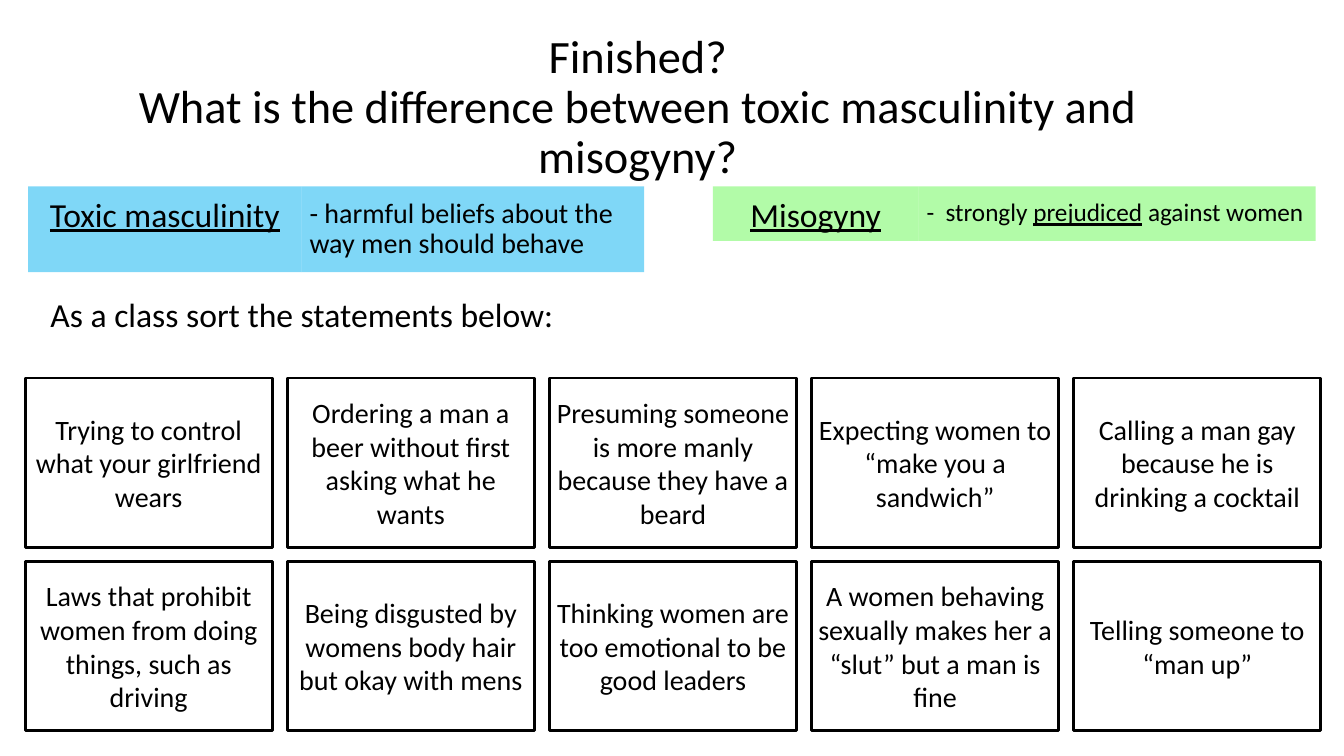
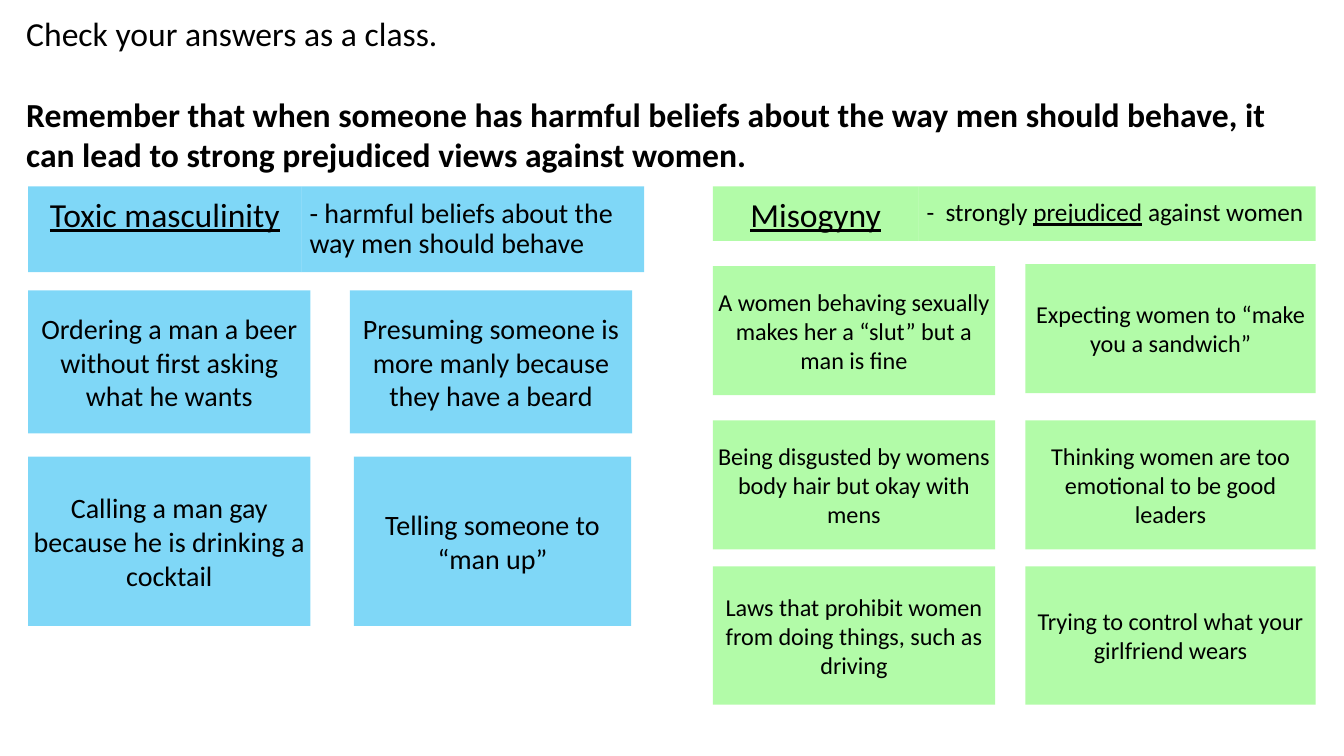
from lxml.etree import SubElement
from pptx import Presentation
from pptx.dml.color import RGBColor
from pptx.enum.shapes import MSO_SHAPE
from pptx.enum.text import MSO_ANCHOR, PP_ALIGN
from pptx.oxml.ns import qn
from pptx.util import Inches, Pt

FONT = "Calibri"
BLACK, BLUE, GREEN = "000000", "00B0F0", "66F852"
CARD_MARGINS = (0.05, 0.07)
TERM_MARGINS = (0.13, 0.07)
MEANING_MARGINS = (0.08, 0.08)
TEXT_MARGINS = (0.13, 0.13)


def write(shape, lines, size, margins, align=PP_ALIGN.LEFT, anchor=MSO_ANCHOR.TOP, spacing=1.0):
    frame = shape.text_frame
    frame.word_wrap = True
    frame.vertical_anchor = anchor
    frame.margin_left = frame.margin_right = Inches(margins[0])
    frame.margin_top = frame.margin_bottom = Inches(margins[1])
    for index, line in enumerate(lines):
        paragraph = frame.add_paragraph() if index else frame.paragraphs[0]
        paragraph.alignment = align
        paragraph.line_spacing = spacing
        paragraph.font.name = FONT
        paragraph.font.size = Pt(size)
        paragraph.font.color.rgb = RGBColor.from_string(BLACK)
        paragraph.add_run().text = line
    return frame.paragraphs


def add_box(slide, left, top, width, height, fill=None):
    shape = slide.shapes.add_shape(
        MSO_SHAPE.RECTANGLE, Inches(left), Inches(top), Inches(width), Inches(height))
    shape.shadow.inherit = False
    if fill:
        shape.fill.solid()
        shape.fill.fore_color.rgb = RGBColor.from_string(fill)
        color = shape.fill._xPr.find(qn("a:solidFill"))[0]
        SubElement(color, qn("a:alpha")).set("val", "50000")
        shape.line.fill.background()
    else:
        shape.fill.background()
        shape.line.color.rgb = RGBColor.from_string(BLACK)
        shape.line.width = Pt(2)
    return shape


presentation = Presentation()
presentation.slide_width = Inches(13.33)
presentation.slide_height = Inches(7.5)
blank = presentation.slide_layouts[6]
sorting_slide = presentation.slides.add_slide(blank)
answer_slide = presentation.slides.add_slide(blank)

control = "Trying to control what your girlfriend wears"
beer = "Ordering a man a beer without first asking what he wants"
beard = "Presuming someone is more manly because they have a beard"
sandwich = "Expecting women to “make you a sandwich”"
cocktail = "Calling a man gay because he is drinking a cocktail"
laws = "Laws that prohibit women from doing things, such as driving"
hair = "Being disgusted by womens body hair but okay with mens"
leaders = "Thinking women are too emotional to be good leaders"
double_standard = "A women behaving sexually makes her a “slut” but a man is fine"
man_up = "Telling someone to “man up”"

terms = [
    ("Toxic masculinity", 0.28, 2.71, 3.4, 0.85, BLUE, 20,
     [("- harmful beliefs about the way men should behave", False)]),
    ("Misogyny", 7.07, 2.04, 3.94, 0.54, GREEN, 18,
     [("-  strongly ", False), ("prejudiced", True), (" against women", False)]),
]
for slide in (sorting_slide, answer_slide):
    for term, left, term_width, meaning_width, height, color, size, parts in terms:
        term_box = add_box(slide, left, 1.85, term_width, height, color)
        paragraph = write(term_box, [term], 24, TERM_MARGINS, PP_ALIGN.CENTER)[0]
        paragraph.font.underline = True
        paragraph.runs[0].font.underline = True
        meaning_box = add_box(slide, left + term_width, 1.85, meaning_width, height, color)
        (first_text, _), *other_parts = parts
        paragraph = write(meaning_box, [first_text], size, MEANING_MARGINS,
                          anchor=MSO_ANCHOR.MIDDLE, spacing=0.9)[0]
        for text, underlined in other_parts:
            run = paragraph.add_run()
            run.text = text
            run.font.underline = underlined

title = sorting_slide.shapes.add_textbox(Inches(0.25), Inches(0.2), Inches(12.15), Inches(0.87))
write(title, ["Finished?", "What is the difference between toxic masculinity and misogyny?"],
      33.1, TEXT_MARGINS, PP_ALIGN.CENTER, spacing=0.9)
instruction = sorting_slide.shapes.add_textbox(Inches(0.37), Inches(2.79), Inches(7.4), Inches(0.68))
write(instruction, ["As a class sort the statements below:"], 24, TEXT_MARGINS)

statement_rows = [
    [control, beer, beard, sandwich, cocktail],
    [laws, hair, leaders, double_standard, man_up],
]
for row, statements in enumerate(statement_rows):
    for column, statement in enumerate(statements):
        card = add_box(sorting_slide, 0.25 + 2.6 * column, 3.75 + 1.82 * row, 2.45, 1.68)
        write(card, [statement], 20, CARD_MARGINS, PP_ALIGN.CENTER, MSO_ANCHOR.MIDDLE)

reminder = answer_slide.shapes.add_textbox(Inches(0.13), Inches(0), Inches(12.92), Inches(1.88))
paragraphs = write(reminder, [
    "Check your answers as a class.",
    "Remember that when someone has harmful beliefs about the way men should behave, "
    "it can lead to strong prejudiced views against women.",
], 24, TEXT_MARGINS)
paragraphs[1].space_before = Pt(29)
paragraphs[1].font.bold = True

answers = [
    (BLUE, 20, [
        (beer, 0.28, 2.88, 2.8, 1.42), (beard, 3.47, 2.88, 2.8, 1.42),
        (cocktail, 0.28, 4.53, 2.8, 1.68), (man_up, 3.51, 4.53, 2.75, 1.68),
    ]),
    (GREEN, 17.3, [
        (double_standard, 7.07, 2.64, 2.8, 1.28), (sandwich, 10.17, 2.62, 2.88, 1.28),
        (hair, 7.07, 4.17, 2.8, 1.28), (leaders, 10.17, 4.17, 2.88, 1.28),
        (laws, 7.07, 5.62, 2.8, 1.37), (control, 10.17, 5.62, 2.88, 1.37),
    ]),
]
for color, size, cards in answers:
    for statement, left, top, width, height in cards:
        card = add_box(answer_slide, left, top, width, height, color)
        write(card, [statement], size, CARD_MARGINS, PP_ALIGN.CENTER, MSO_ANCHOR.MIDDLE)

presentation.save("out.pptx")
